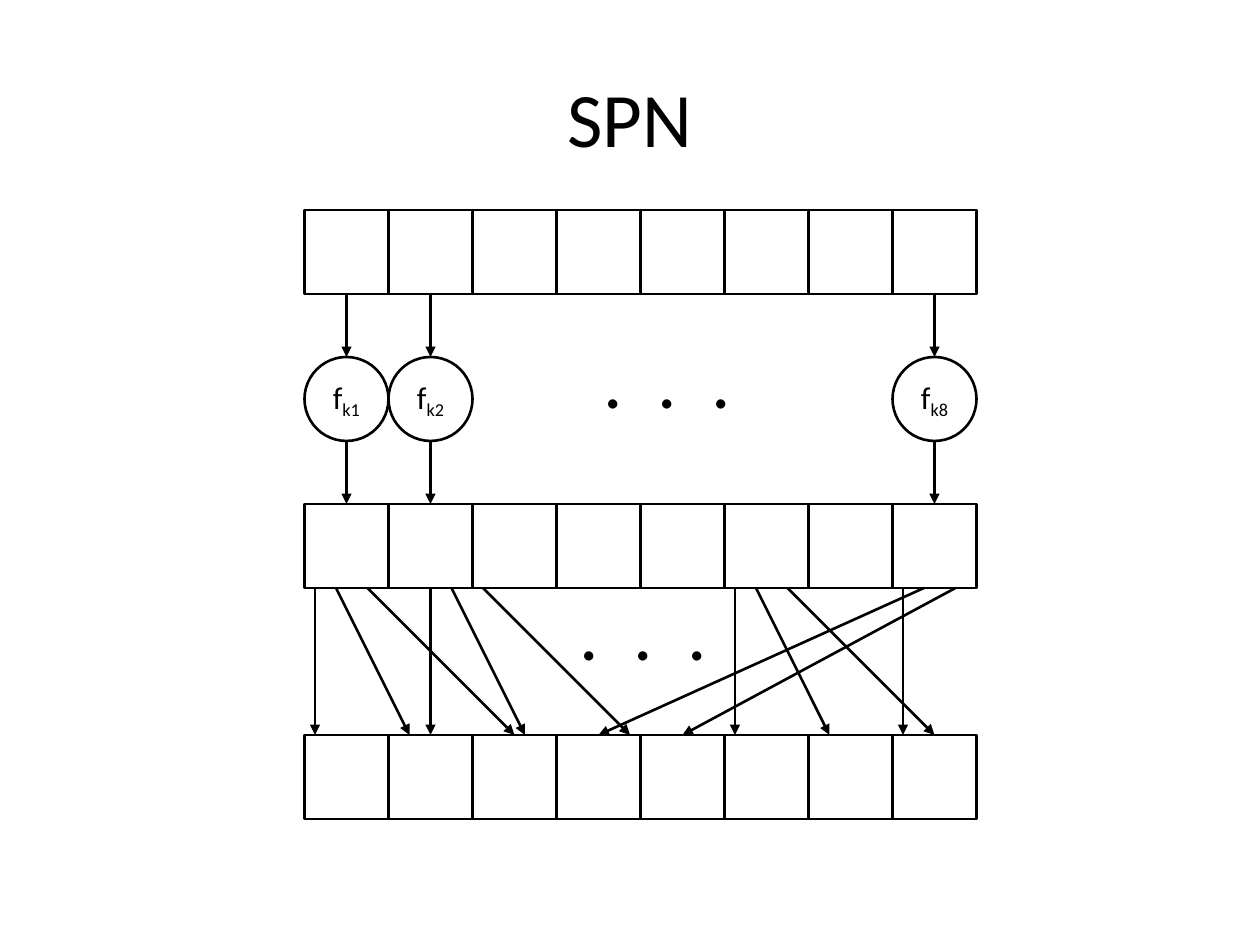
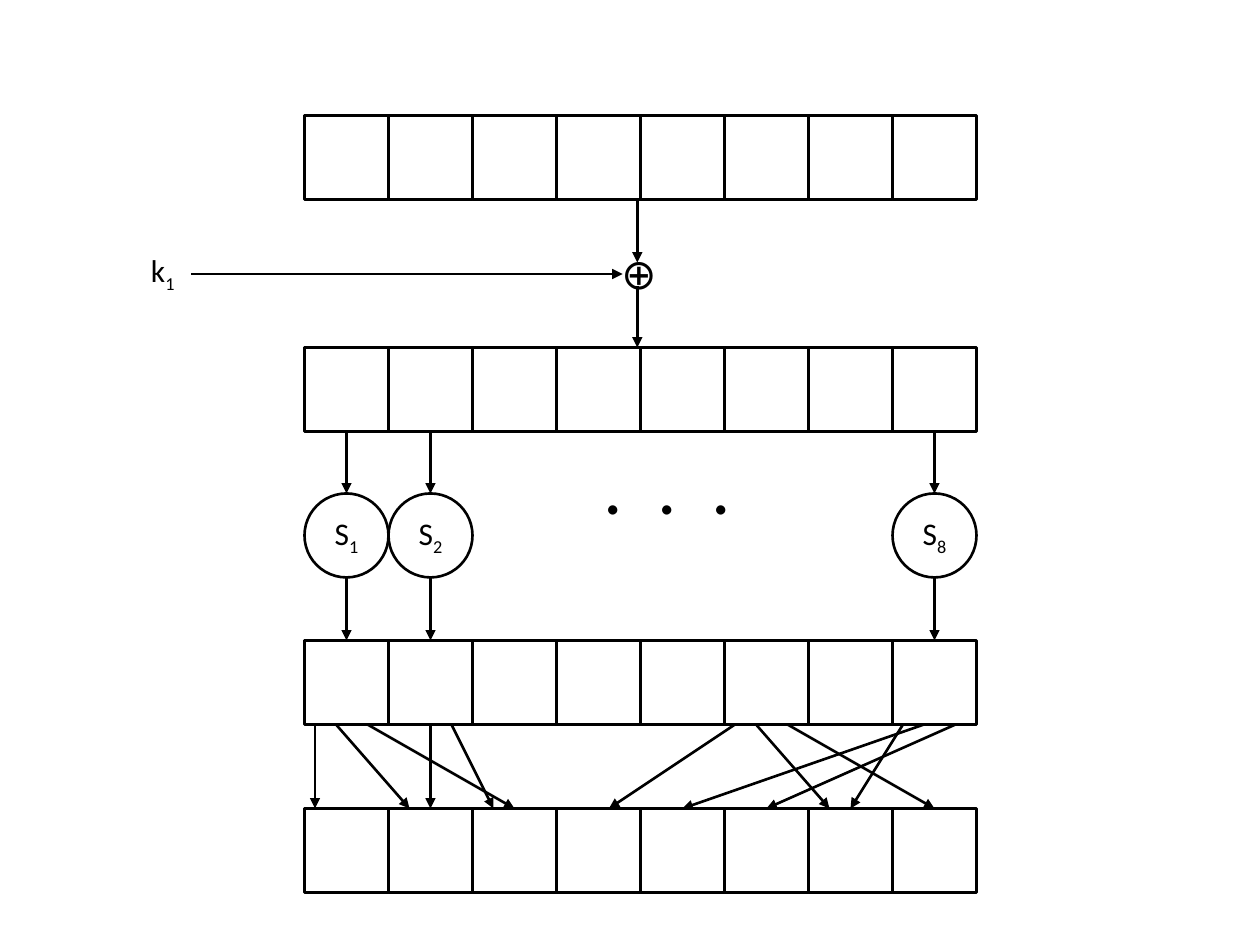
from lxml.etree import SubElement
from pptx import Presentation
from pptx.dml.color import RGBColor
from pptx.enum.shapes import MSO_CONNECTOR, MSO_SHAPE
from pptx.enum.text import MSO_ANCHOR, PP_ALIGN
from pptx.oxml.ns import qn
from pptx.util import Pt

PX = 7620  # 120 px to the inch
COLORS = {"ink": "000000", "paper": "FFFFFF"}
INK = RGBColor.from_string(COLORS["ink"])
FONT = "Calibri"
CELL, ROW_LEFT, CELL_COUNT = 80, 290, 8
ACTIVE_COLUMNS = (0, 1, 7)


def write(frame, text, size, subscript="", align=PP_ALIGN.LEFT, spacing=0):
    frame.word_wrap = False
    paragraph = frame.paragraphs[0]
    paragraph.alignment = align
    for part, baseline in ((text, 0), (subscript, -25000)):
        if not part:
            continue
        run = paragraph.add_run()
        run.text = part
        run.font.size, run.font.name = Pt(size), FONT
        run.font.color.rgb = INK
        properties = run._r.get_or_add_rPr()
        if baseline:
            properties.set("baseline", str(baseline))
        if spacing:
            properties.set("spc", str(spacing))


def arrow(slide, sites, start, end):
    """Draw an arrow, joined to a shape where an end meets a known site."""
    connector = slide.shapes.add_connector(
        MSO_CONNECTOR.STRAIGHT, *(value * PX for value in start + end))
    connector.line.color.rgb = INK
    connector.line.width = Pt(1.5)
    SubElement(connector.line._get_or_add_ln(), qn("a:tailEnd"), type="triangle")
    SubElement(connector._element.spPr, qn("a:effectLst"))
    if start in sites:
        connector.begin_connect(*sites[start])
    if end in sites:
        connector.end_connect(*sites[end])


# Each diagram: rows of cells, round functions, dots and bit permutation
diagrams = [
    {
        "rows": (200, 480, 700),
        "circles": (340, "f", "k"),
        "dots": ((563, 310), (540, 550)),
        "permutation": ((300, 300), (320, 390), (350, 490), (410, 410),
                        (430, 500), (460, 600), (700, 700), (720, 790),
                        (750, 890), (860, 860), (880, 570), (910, 650)),
    },
    {
        "rows": (110, 331, 610, 770),
        "circles": (470, "S", ""),
        "dots": ((563, 411),),
        "permutation": ((300, 300), (320, 390), (350, 490), (410, 410),
                        (430, 470), (700, 580), (720, 790), (750, 890),
                        (860, 810), (880, 650), (910, 730)),
    },
]

presentation = Presentation()
presentation.slide_width, presentation.slide_height = 1200 * PX, 900 * PX

for diagram in diagrams:
    slide = presentation.slides.add_slide(presentation.slide_layouts[6])
    slide.background.fill.solid()
    slide.background.fill.fore_color.rgb = RGBColor.from_string(COLORS["paper"])
    sites = {}
    rows = diagram["rows"]
    circle_top, letter, prefix = diagram["circles"]

    # Cells and circles, with their joining sites
    outlines = [(MSO_SHAPE.RECTANGLE, column, top)
                for top in rows for column in range(CELL_COUNT)]
    outlines += [(MSO_SHAPE.OVAL, column, circle_top) for column in ACTIVE_COLUMNS]
    for kind, column, top in outlines:
        left = ROW_LEFT + column * CELL
        middle = left + CELL // 2
        shape = slide.shapes.add_shape(kind, left * PX, top * PX, CELL * PX, CELL * PX)
        shape.shadow.inherit = False
        shape.fill.background()
        shape.line.color.rgb = INK
        shape.line.width = Pt(1.5)
        sites[middle, top] = (shape, 0)
        if kind == MSO_SHAPE.RECTANGLE:
            sites[middle, top + CELL] = (shape, 2)
        else:
            shape.text_frame.vertical_anchor = MSO_ANCHOR.MIDDLE
            write(shape.text_frame, letter, 18, f"{prefix}{column + 1}", PP_ALIGN.CENTER)

    # Arrows into and out of the circles
    source_row, mixed_row, output_row = rows[-3:]
    for column in ACTIVE_COLUMNS:
        middle = ROW_LEFT + column * CELL + CELL // 2
        arrow(slide, sites, (middle, source_row + CELL), (middle, circle_top))
        arrow(slide, sites, (middle, circle_top + CELL), (middle, mixed_row))

    # Bit permutation
    for start_x, end_x in diagram["permutation"]:
        arrow(slide, sites, (start_x, mixed_row + CELL), (end_x, output_row))

    # Dots for the omitted columns
    for left, top in diagram["dots"]:
        box = slide.shapes.add_textbox(left * PX, top * PX, 156 * PX, 101 * PX)
        write(box.text_frame, ". . .", 44, spacing=498)

# Title of the first slide
network_slide, key_slide = presentation.slides
title = network_slide.shapes.add_textbox(60 * PX, 36 * PX, 1080 * PX, 150 * PX)
title.text_frame.vertical_anchor = MSO_ANCHOR.MIDDLE
write(title.text_frame, "SPN", 44, align=PP_ALIGN.CENTER)
title.text_frame.word_wrap = True

# Key mixing on the second slide
for start, end in (((607, 190), (607, 250)), ((607, 272), (607, 331)),
                   ((182, 261), (593, 261))):
    arrow(key_slide, {}, start, end)
for text, subscript, size, left, top, width, height in (
        ("⊕", "", 24, 580, 230, 55, 60), ("k", "1", 18, 132, 233, 48, 48)):
    box = key_slide.shapes.add_textbox(left * PX, top * PX, width * PX, height * PX)
    write(box.text_frame, text, size, subscript)

presentation.save("out.pptx")
